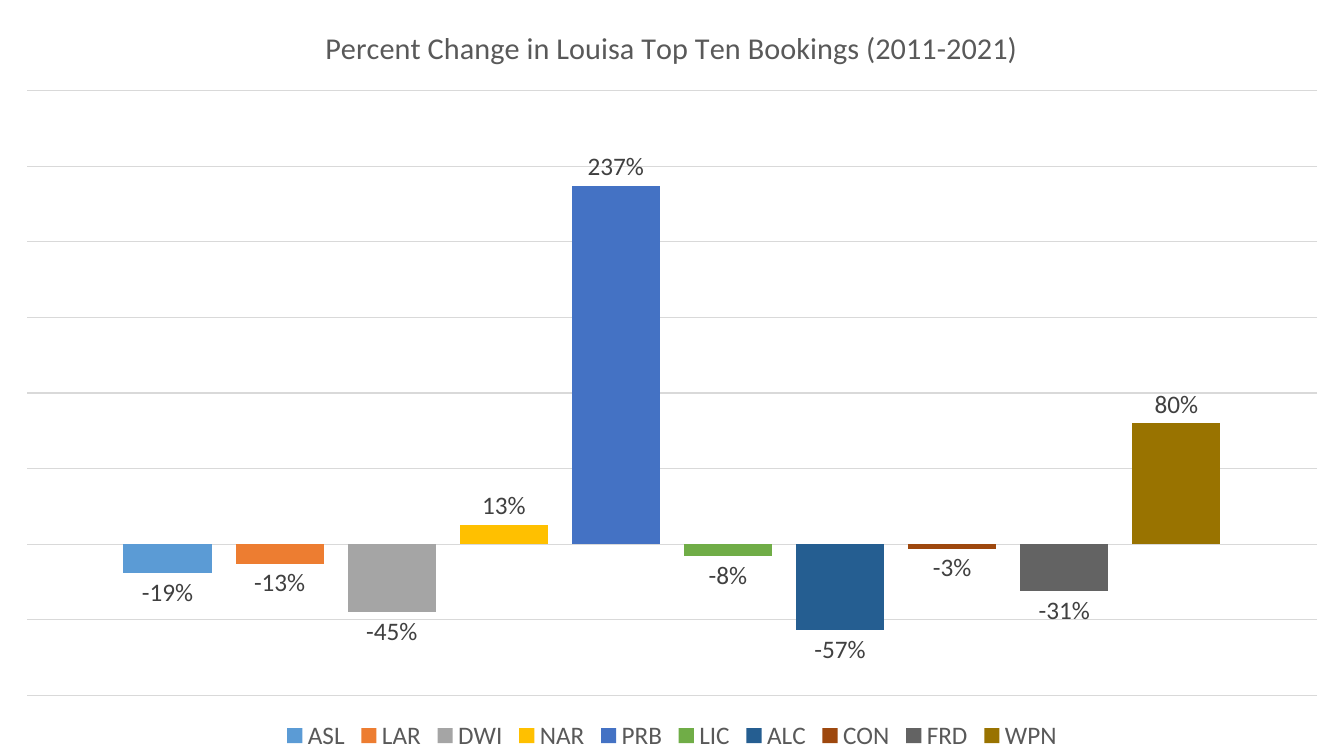
from dataclasses import dataclass

from pptx import Presentation
from pptx.chart.chart import Chart
from pptx.chart.data import CategoryChartData
from pptx.chart.series import BarSeries
from pptx.dml.color import RGBColor
from pptx.enum.chart import XL_CHART_TYPE as ChartType
from pptx.enum.chart import XL_LABEL_POSITION as LabelPosition
from pptx.enum.chart import XL_LEGEND_POSITION as LegendPosition
from pptx.oxml import parse_xml
from pptx.oxml.ns import nsdecls
from pptx.text.text import Font
from pptx.util import Pt


@dataclass(frozen=True)
class Theme:
    font: str = "Calibri"
    title_size: float = 21.6
    body_size: float = 18
    heading: str = "595959"
    label: str = "404040"
    base: str = "000000"
    grid: str = "D9D9D9"
    percent: str = "0%"


@dataclass(frozen=True)
class Booking:
    code: str
    change: float
    color: str


THEME = Theme()
SLIDE_WIDTH, SLIDE_HEIGHT = Pt(960), Pt(540)
TITLE = "Percent Change in Louisa Top Ten Bookings (2011-2021)"
PLOT_FRAME = {"x": 0.02, "y": 0.12, "w": 0.96, "h": 0.8}
BOOKINGS = [
    Booking("ASL", -0.19, "5B9BD5"),
    Booking("LAR", -0.13, "ED7D31"),
    Booking("DWI", -0.45, "A5A5A5"),
    Booking("NAR", 0.13, "FFC000"),
    Booking("PRB", 2.37, "4472C4"),
    Booking("LIC", -0.08, "70AD47"),
    Booking("ALC", -0.57, "255E91"),
    Booking("CON", -0.03, "9E480E"),
    Booking("FRD", -0.31, "636363"),
    Booking("WPN", 0.8, "997300"),
]


def apply(target: object, values: dict[str, object]) -> None:
    """Set each named format value on the target."""
    for name, value in values.items():
        setattr(target, name, value)


def style_font(font: Font, size: float, color: str) -> None:
    """Give a font the theme face with a size and colour."""
    apply(font, {"name": THEME.font, "size": Pt(size), "bold": False})
    font.color.rgb = RGBColor.from_string(color)


def style_title(chart: Chart) -> None:
    """Write the chart title."""
    heading = chart.chart_title
    heading.include_text_in_layout = False
    heading.text_frame.text = TITLE
    run = heading.text_frame.paragraphs[0].runs[0]
    style_font(run.font, THEME.title_size, THEME.heading)


def style_axes(chart: Chart) -> None:
    """Hide both axes and keep the light value gridlines."""
    chart.category_axis.visible = False
    axis = chart.value_axis
    apply(axis, {
        "visible": False,
        "minimum_scale": -1,
        "maximum_scale": 3,
        "major_unit": 0.5,
        "has_major_gridlines": True,
    })
    apply(axis.tick_labels, {"number_format": THEME.percent, "number_format_is_linked": False})
    grid = axis.major_gridlines.format.line
    grid.width = Pt(0.75)
    grid.color.rgb = RGBColor.from_string(THEME.grid)


def style_legend(chart: Chart) -> None:
    """Place the legend below the columns."""
    chart.has_legend = True
    apply(chart.legend, {"position": LegendPosition.BOTTOM, "include_in_layout": False})
    style_font(chart.legend.font, THEME.body_size, THEME.heading)


def style_column(column: BarSeries, booking: Booking) -> None:
    """Colour one booking column and label its change."""
    column.invert_if_negative = False
    column.format.fill.solid()
    column.format.fill.fore_color.rgb = RGBColor.from_string(booking.color)
    labels = column.data_labels
    apply(labels, {
        "show_value": True,
        "number_format": THEME.percent,
        "number_format_is_linked": False,
        "position": LabelPosition.OUTSIDE_END,
    })
    style_font(labels.font, THEME.body_size, THEME.label)


def place_plot(chart: Chart) -> None:
    """Fix the inner plot area as fractions of the chart."""
    frame = "".join(f'<c:{side} val="{part}"/>' for side, part in PLOT_FRAME.items())
    layout = parse_xml(
        f'<c:layout {nsdecls("c")}><c:manualLayout><c:layoutTarget val="inner"/>'
        f'<c:xMode val="edge"/><c:yMode val="edge"/>{frame}</c:manualLayout></c:layout>'
    )
    plot_area = chart.element.chart.plotArea
    for automatic in plot_area.findall(layout.tag):
        plot_area.remove(automatic)
    plot_area.insert(0, layout)


def main() -> None:
    """Build the bookings slide."""
    deck = Presentation()
    apply(deck, {"slide_width": SLIDE_WIDTH, "slide_height": SLIDE_HEIGHT})
    slide = deck.slides.add_slide(deck.slide_layouts.get_by_name("Blank"))
    changes = CategoryChartData(number_format=THEME.percent)
    changes.categories = ["1"]
    for booking in BOOKINGS:
        changes.add_series(booking.code, [booking.change])
    chart = slide.shapes.add_chart(
        ChartType.COLUMN_CLUSTERED, Pt(0), Pt(0), SLIDE_WIDTH, SLIDE_HEIGHT, changes
    ).chart
    style_font(chart.font, THEME.body_size, THEME.base)
    style_title(chart)
    style_axes(chart)
    style_legend(chart)
    plot = chart.plots[0]
    apply(plot, {"gap_width": 219, "overlap": -27, "vary_by_categories": False})
    for column, booking in zip(plot.series, BOOKINGS):
        style_column(column, booking)
    place_plot(chart)
    deck.save("out.pptx")


if __name__ == "__main__":
    main()
